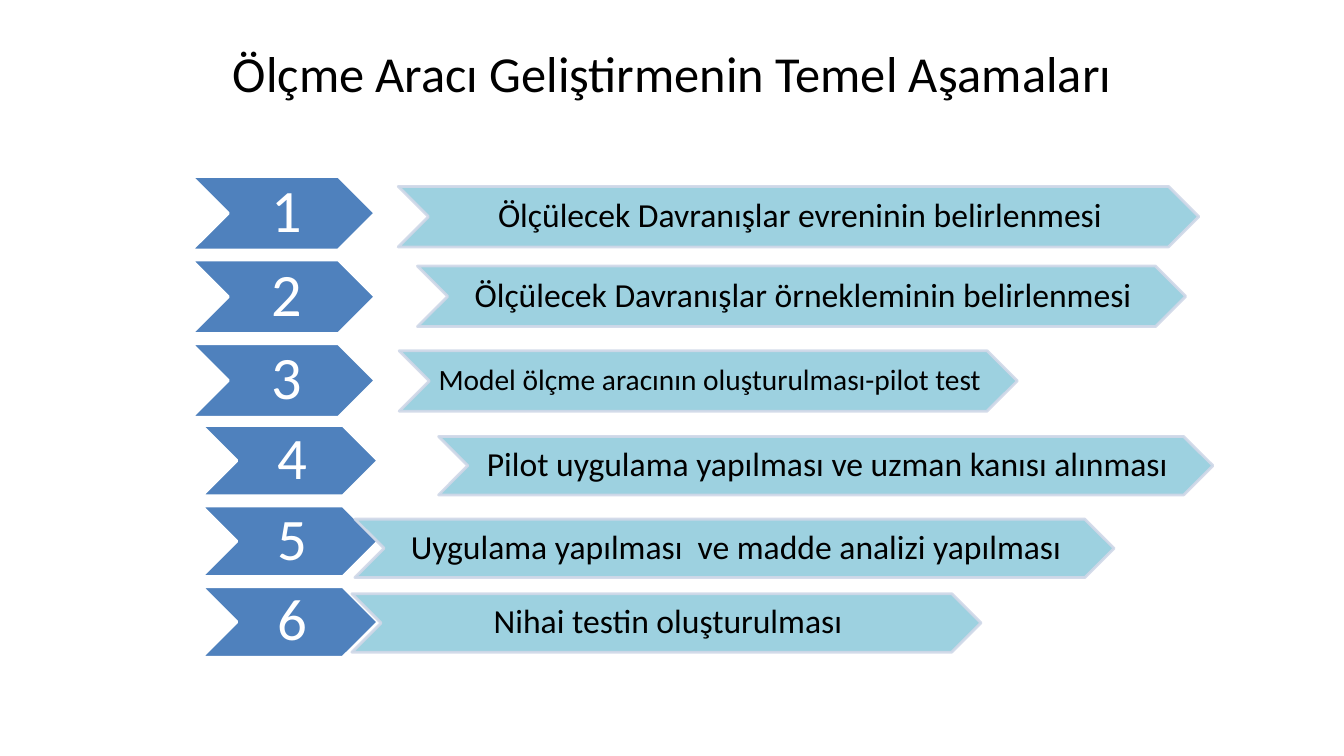
from dataclasses import dataclass

from lxml.etree import SubElement
from pptx import Presentation
from pptx.dml.color import RGBColor
from pptx.enum.shapes import MSO_SHAPE as Preset
from pptx.enum.text import MSO_ANCHOR as Anchor, PP_ALIGN as Align
from pptx.oxml.ns import qn
from pptx.util import Inches, Pt


@dataclass(frozen=True)
class Theme:
    """Fonts, colours and type sizes of the slide."""
    font: str = "Calibri"
    ink: str = "000000"
    paper: str = "FFFFFF"
    badge: str = "4F81BD"
    banner: str = "93CDDD"
    banner_edge: str = "D0D8E8"
    banner_opacity: int = 90
    edge_width: float = 2
    title_size: int = 36
    step_size: int = 24
    compact_size: int = 21


THEME = Theme()

STAGES = [
    {"left": 1.9, "top": 1.75, "pitch": 0.83, "badge_size": (1.82, 0.73),
     "number_size": 43, "banner_height": 0.6, "steps": [
         ("Ölçülecek Davranışlar evreninin belirlenmesi", 3.95, 1.85, 7.94, THEME.step_size),
         ("Ölçülecek Davranışlar örnekleminin belirlenmesi", 4.14, 2.64, 7.62, THEME.step_size),
         ("Model ölçme aracının oluşturulması-pilot test", 3.96, 3.48, 6.13, THEME.compact_size)]},
    {"left": 2, "top": 4.22, "pitch": 0.8, "badge_size": (1.75, 0.7),
     "number_size": 42, "banner_height": 0.58, "steps": [
         ("Pilot uygulama yapılması ve uzman kanısı alınması", 4.35, 4.33, 7.68, THEME.step_size),
         ("Uygulama yapılması  ve madde analizi yapılması", 3.52, 5.15, 7.53, THEME.step_size),
         ("Nihai testin oluşturulması", 3.49, 5.89, 6.24, THEME.step_size)]},
]


def write(shape, text, size, color, insets, spacing=1.0):
    """Set one centred line of text in a shape."""
    frame = shape.text_frame
    left, top, right, bottom = map(Inches, insets)
    layout = {"word_wrap": True, "vertical_anchor": Anchor.MIDDLE,
              "margin_left": left, "margin_top": top,
              "margin_right": right, "margin_bottom": bottom}
    for name, value in layout.items():
        setattr(frame, name, value)
    para = frame.paragraphs[0]
    para.alignment = Align.CENTER
    para.line_spacing = spacing
    span = para.add_run()
    span.text = text
    for name, value in {"name": THEME.font, "size": Pt(size)}.items():
        setattr(span.font, name, value)
    span.font.color.rgb = RGBColor.from_string(color)


def paint(paint_format, color, opacity=100):
    """Apply a solid colour, translucent when the opacity is below 100."""
    paint_format.solid()
    paint_format.fore_color.rgb = RGBColor.from_string(color)
    if opacity < 100:
        color_node = paint_format.fore_color._xFill.find(qn("a:srgbClr"))
        SubElement(color_node, qn("a:alpha"), val=str(opacity * 1000))


def add_chevron(group, box, fill, edge, opacity=100):
    """Add an outlined chevron to a group."""
    chevron = group.shapes.add_shape(Preset.CHEVRON, *map(Inches, box))
    chevron.shadow.inherit = False
    paint(chevron.fill, fill, opacity)
    paint(chevron.line.fill, edge, opacity)
    chevron.line.width = Pt(THEME.edge_width)
    return chevron


def add_title(page, text):
    """Add the slide heading."""
    box = page.shapes.add_textbox(*map(Inches, (0.67, 0.13, 12, 1.18)))
    write(box, text, THEME.title_size, THEME.ink, (0.1, 0.05, 0.1, 0.05))


def add_stage(page, stage, first_number):
    """Add a group of numbered badges with their step banners."""
    group = page.shapes.add_group_shape()
    for row, (text, left, top, width, size) in enumerate(stage["steps"]):
        badge_top = stage["top"] + row * stage["pitch"]
        badge = add_chevron(group, (stage["left"], badge_top, *stage["badge_size"]),
                            THEME.badge, THEME.paper)
        write(badge, str(first_number + row), stage["number_size"], THEME.paper,
              (0.06, 0.03, 0, 0.03), 0.9)
        banner = add_chevron(group, (left, top, width, stage["banner_height"]),
                             THEME.banner, THEME.banner_edge, THEME.banner_opacity)
        write(banner, text, size, THEME.ink, (0.03, 0.02, 0, 0.02), 0.9)


def main():
    """Build the slide and save the deck."""
    deck = Presentation()
    deck.slide_width, deck.slide_height = Inches(13.33), Inches(7.5)
    page = deck.slides.add_slide(deck.slide_layouts[6])
    add_title(page, "Ölçme Aracı Geliştirmenin Temel Aşamaları")
    number = 1
    for stage in STAGES:
        add_stage(page, stage, number)
        number += len(stage["steps"])
    deck.save("out.pptx")


if __name__ == "__main__":
    main()
